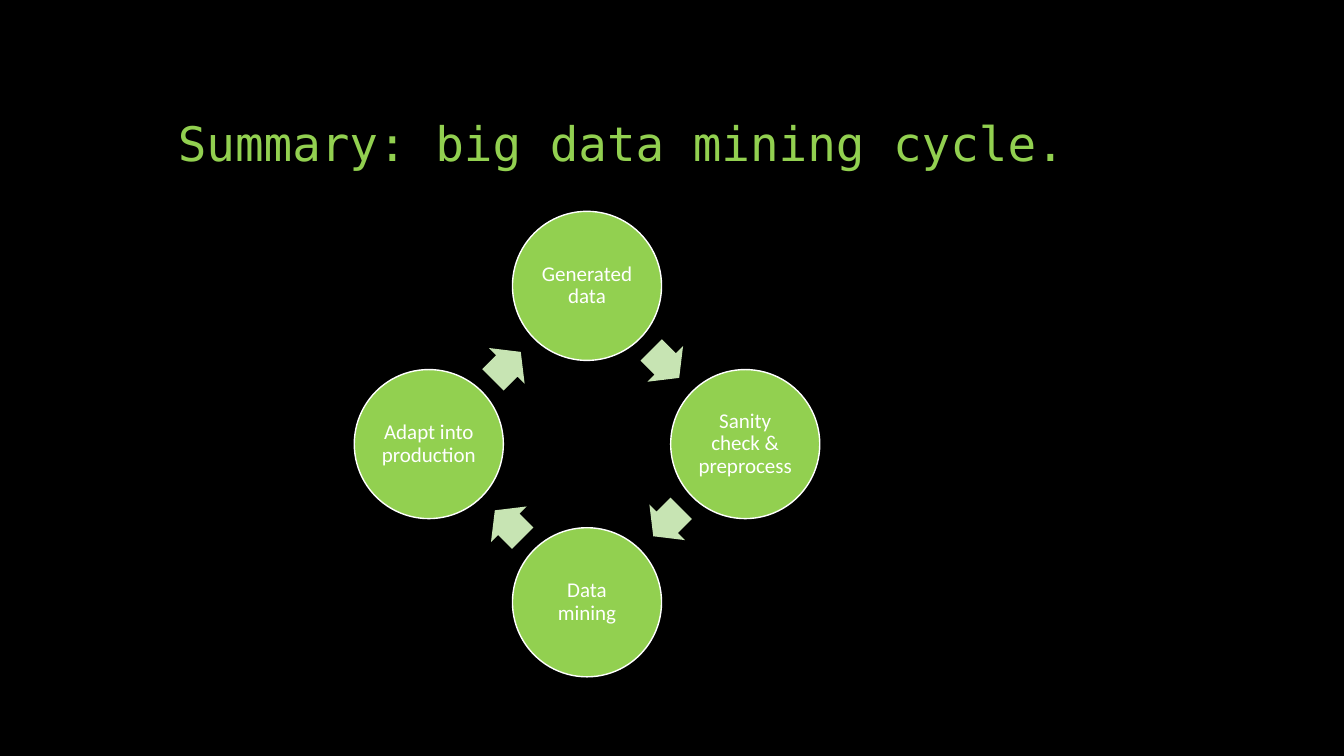
import math

import pptx
import pptx.dml.color
import pptx.enum.shapes
import pptx.enum.text
import pptx.util

Pt = pptx.util.Pt
RGBColor = pptx.dml.color.RGBColor
MSO_SHAPE = pptx.enum.shapes.MSO_SHAPE
PP_ALIGN = pptx.enum.text.PP_ALIGN
MSO_ANCHOR = pptx.enum.text.MSO_ANCHOR

# Content, clockwise from the top
TITLE = "Summary: big data mining cycle."
STAGES = ["Generated data", "Sanity check & preprocess", "Data mining", "Adapt into production"]

# Colours
BLACK = RGBColor(0x00, 0x00, 0x00)
WHITE = RGBColor(0xFF, 0xFF, 0xFF)
GREEN = RGBColor(0x92, 0xD0, 0x50)
PALE_GREEN = RGBColor(0xC7, 0xE4, 0xB3)

# Cycle geometry in points and degrees
CENTER_X, CENTER_Y = 419.3, 317.2
STAGE_RADIUS, STAGE_SIZE = 113, 106.5
ARROW_RADIUS, ARROW_WIDTH, ARROW_HEIGHT = 80, 28.2, 36
ARROW_LEAD = 44.3
STEP = 360 / len(STAGES)


def set_text(shape, text, *, font, size, color, align, anchor, margins):
    frame = shape.text_frame
    frame.word_wrap = True
    frame.vertical_anchor = anchor
    frame.margin_left = frame.margin_right = Pt(margins[0])
    frame.margin_top = frame.margin_bottom = Pt(margins[1])
    paragraph = frame.paragraphs[0]
    paragraph.alignment = align
    paragraph.line_spacing = 0.9
    run = paragraph.add_run()
    run.text = text
    run.font.name = font
    run.font.size = Pt(size)
    run.font.color.rgb = color


def add_on_ring(slide, kind, angle, radius, width, height, fill):
    """Centre a shape on the ring, at an angle clockwise from the top."""
    x = CENTER_X + radius * math.sin(math.radians(angle))
    y = CENTER_Y - radius * math.cos(math.radians(angle))
    shape = slide.shapes.add_shape(
        kind, Pt(x - width / 2), Pt(y - height / 2), Pt(width), Pt(height))
    shape.shadow.inherit = False
    shape.fill.solid()
    shape.fill.fore_color.rgb = fill
    return shape


def main():
    presentation = pptx.Presentation()
    presentation.slide_width, presentation.slide_height = Pt(960), Pt(540)
    slide = presentation.slides.add_slide(presentation.slide_layouts[6])
    slide.background.fill.solid()
    slide.background.fill.fore_color.rgb = BLACK

    # Title
    title = slide.shapes.add_textbox(Pt(120), Pt(36), Pt(720), Pt(90))
    set_text(title, TITLE, font="DejaVu Sans Mono", size=34, color=GREEN,
             align=PP_ALIGN.LEFT, anchor=MSO_ANCHOR.BOTTOM, margins=(7.2, 3.6))

    # Stages, each followed by the arrow to the next one
    for index, label in enumerate(STAGES):
        angle = index * STEP
        stage = add_on_ring(slide, MSO_SHAPE.OVAL, angle, STAGE_RADIUS,
                            STAGE_SIZE, STAGE_SIZE, GREEN)
        stage.line.color.rgb = WHITE
        stage.line.width = Pt(1)
        set_text(stage, label, font="Calibri", size=15, color=WHITE,
                 align=PP_ALIGN.CENTER, anchor=MSO_ANCHOR.MIDDLE, margins=(1.5, 1.5))

        arrow = add_on_ring(slide, MSO_SHAPE.RIGHT_ARROW, angle + ARROW_LEAD, ARROW_RADIUS,
                            ARROW_WIDTH, ARROW_HEIGHT, PALE_GREEN)
        arrow.line.fill.background()
        arrow.adjustments[0] = 0.6
        arrow.adjustments[1] = 0.5
        arrow.rotation = angle + STEP / 2

    presentation.save("out.pptx")


if __name__ == "__main__":
    main()
